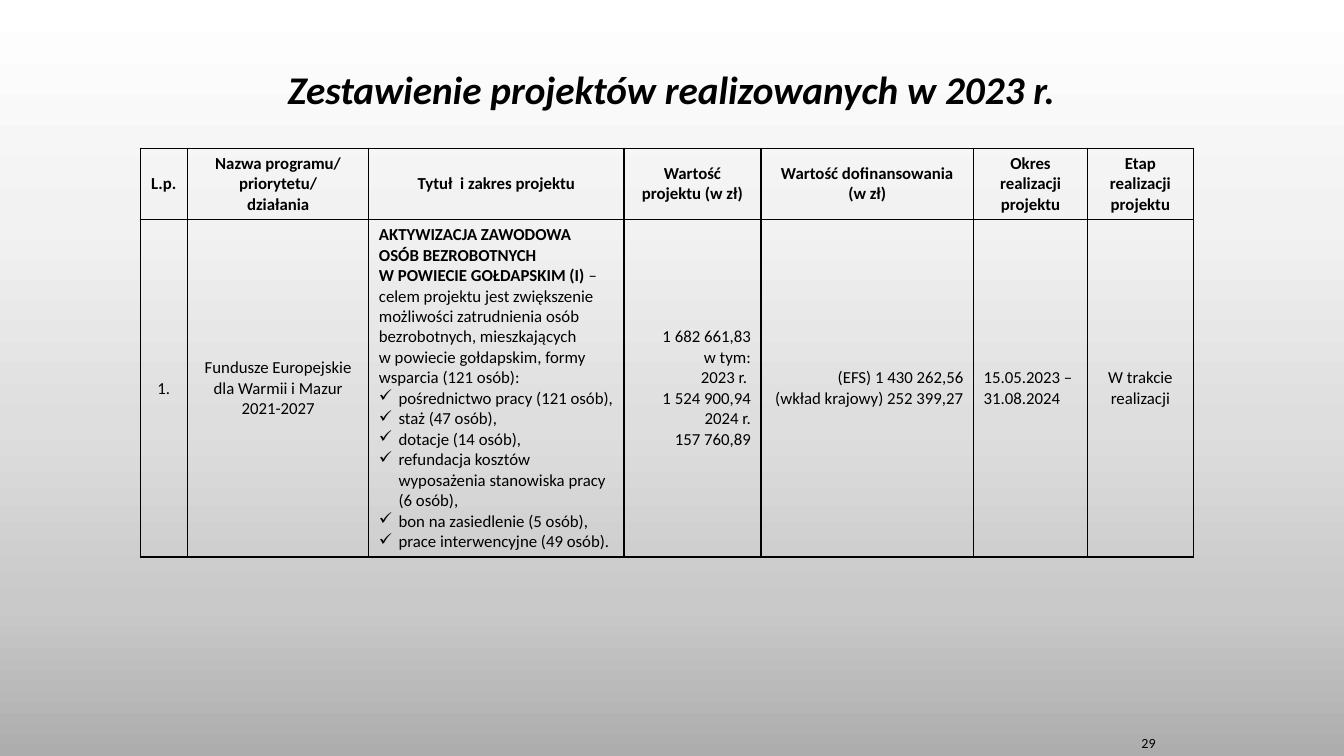
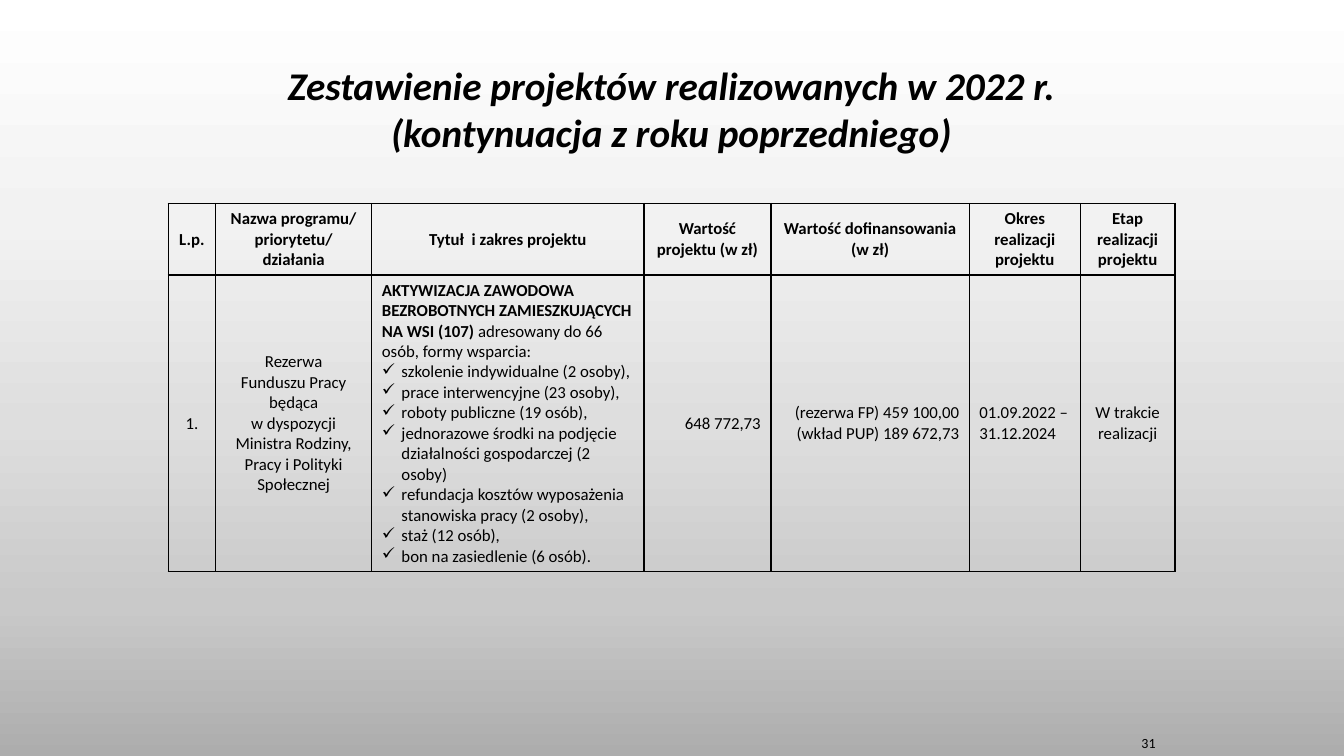
"""Builds two slides that list funded labour-market projects in tables."""
import pptx
import pptx.dml.color
import pptx.enum.text
import pptx.oxml.ns
import pptx.util
from lxml import etree

Pt = pptx.util.Pt
qn = pptx.oxml.ns.qn
ALIGN = pptx.enum.text.PP_ALIGN
ANCHOR = pptx.enum.text.MSO_ANCHOR

BLACK = pptx.dml.color.RGBColor(0, 0, 0)
FONT = "Calibri"
GRADIENT = [
    (0, pptx.dml.color.RGBColor(0xFF, 0xFF, 0xFF)),
    (29, pptx.dml.color.RGBColor(0xF2, 0xF2, 0xF2)),
    (56, pptx.dml.color.RGBColor(0xDE, 0xDE, 0xDE)),
    (80, pptx.dml.color.RGBColor(0xC9, 0xC9, 0xC9)),
    (100, pptx.dml.color.RGBColor(0xAD, 0xAD, 0xAD)),
]
SLIDE_WIDTH, SLIDE_HEIGHT = 960, 540
TITLE_LEFT, TITLE_TOP, TITLE_WIDTH = 173.5, 32.4, 612
PAGE_BOX = (800.6, 516.2, 39.6, 23.8)
HEADER_HEIGHT = 51.1
BULLET_INDENT = 14

HEADERS = [
    ["L.p."],
    ["Nazwa programu/", "priorytetu/", "działania"],
    ["Tytuł  i zakres projektu"],
    ["Wartość projektu (w zł)"],
    ["Wartość dofinansowania (w zł)"],
    ["Okres", "realizacji projektu"],
    ["Etap", "realizacji projektu"],
]
BODY_ALIGNMENTS = [
    ALIGN.CENTER, ALIGN.CENTER, ALIGN.LEFT, ALIGN.RIGHT,
    ALIGN.RIGHT, ALIGN.LEFT, ALIGN.CENTER,
]
SCOPE_COLUMN = 2

PROJECTS = [
    {
        "title": "Zestawienie projektów realizowanych w 2023 r.",
        "title_height": 62.6,
        "page": "29",
        "position": (100.1, 105.8),
        "widths": [33.8, 129.6, 182.2, 97.9, 151.9, 81.4, 75.6],
        "body_height": 241,
        "cells": [
            ["1."],
            ["Fundusze Europejskie dla Warmii i Mazur 2021-2027"],
            [
                ("AKTYWIZACJA ZAWODOWA OSÓB BEZROBOTNYCH", ""),
                ("W POWIECIE GOŁDAPSKIM (I)",
                 " – celem projektu jest zwiększenie możliwości zatrudnienia "
                 "osób bezrobotnych, mieszkających"),
                ("", "w powiecie gołdapskim, formy wsparcia (121 osób):"),
            ],
            ["1 682 661,83", "w tym:", "2023 r. ", "1 524 900,94",
             "2024 r.", "157 760,89"],
            ["(EFS) 1 430 262,56", "(wkład krajowy) 252 399,27"],
            ["15.05.2023 – 31.08.2024"],
            ["W trakcie realizacji"],
        ],
        "support": [
            "pośrednictwo pracy (121 osób),",
            "staż (47 osób),",
            "dotacje (14 osób),",
            "refundacja kosztów wyposażenia stanowiska pracy (6 osób),",
            "bon na zasiedlenie (5 osób),",
            "prace interwencyjne (49 osób).",
        ],
    },
    {
        "title": "Zestawienie projektów realizowanych w 2022 r. "
                 "(kontynuacja z roku poprzedniego)",
        "title_height": 90,
        "page": "31",
        "position": (120.2, 145.4),
        "widths": [33.8, 111.6, 194.4, 90.7, 141.8, 79.2, 67.7],
        "body_height": 212,
        "cells": [
            ["1."],
            ["Rezerwa", "Funduszu Pracy będąca",
             "w dyspozycji Ministra Rodziny, Pracy i Polityki Społecznej"],
            [
                ("AKTYWIZACJA ZAWODOWA BEZROBOTNYCH ZAMIESZKUJĄCYCH NA WSI (107) ",
                 "adresowany do 66 osób, formy wsparcia:"),
            ],
            ["648 772,73"],
            ["(rezerwa FP) 459 100,00 (wkład PUP) 189 672,73"],
            ["01.09.2022 – 31.12.2024"],
            ["W trakcie realizacji"],
        ],
        "support": [
            "szkolenie indywidualne (2 osoby),",
            "prace interwencyjne (23 osoby),",
            "roboty publiczne (19 osób),",
            "jednorazowe środki na podjęcie działalności gospodarczej (2 osoby)",
            "refundacja kosztów wyposażenia stanowiska pracy (2 osoby),",
            "staż (12 osób),",
            "bon na zasiedlenie (6 osób).",
        ],
    },
]


def set_background(master):
    fill = master.background.fill
    fill.gradient()
    fill.gradient_angle = 270
    stops = master.element.find(".//" + qn("a:gsLst"))
    for stop in list(stops):
        stops.remove(stop)
    for position, color in GRADIENT:
        stop = etree.SubElement(stops, qn("a:gs"), pos=str(position * 1000))
        etree.SubElement(stop, qn("a:srgbClr"), val=str(color))


def style_font(font, size, bold=False, italic=False):
    font.name = FONT
    font.size = Pt(size)
    font.bold = bold
    font.italic = italic
    font.color.rgb = BLACK


def add_title(slide, text, height):
    title = slide.shapes.title
    title.left, title.top = Pt(TITLE_LEFT), Pt(TITLE_TOP)
    title.width, title.height = Pt(TITLE_WIDTH), Pt(height)
    frame = title.text_frame
    frame.text = text
    frame.auto_size = pptx.enum.text.MSO_AUTO_SIZE.NONE
    frame.vertical_anchor = ANCHOR.MIDDLE
    paragraph = frame.paragraphs[0]
    paragraph.alignment = ALIGN.CENTER
    style_font(paragraph.runs[0].font, 28, bold=True, italic=True)


def add_page_number(slide, text):
    frame = slide.shapes.add_textbox(*map(Pt, PAGE_BOX)).text_frame
    frame.text = text
    frame.word_wrap = True
    frame.vertical_anchor = ANCHOR.BOTTOM
    paragraph = frame.paragraphs[0]
    paragraph.alignment = ALIGN.CENTER
    style_font(paragraph.runs[0].font, 10)


def format_cell(cell):
    cell.fill.background()
    cell.vertical_anchor = ANCHOR.MIDDLE
    properties = cell._tc.get_or_add_tcPr()
    for index, side in enumerate(("lnL", "lnR", "lnT", "lnB")):
        line = etree.Element(qn("a:" + side), w=str(Pt(1)))
        solid = etree.SubElement(line, qn("a:solidFill"))
        etree.SubElement(solid, qn("a:srgbClr"), val=str(BLACK))
        properties.insert(index, line)


def add_bullet(paragraph):
    properties = paragraph._p.get_or_add_pPr()
    properties.set("marL", str(Pt(BULLET_INDENT)))
    properties.set("indent", str(-Pt(BULLET_INDENT)))
    etree.SubElement(properties, qn("a:buChar"), char="✓")


def fill_cell(cell, lines, alignment, bullets=()):
    """Writes lines given as (bold text, regular text), then bulleted items."""
    format_cell(cell)
    frame = cell.text_frame
    all_lines = list(lines) + [("", item) for item in bullets]
    for index, texts in enumerate(all_lines):
        paragraph = frame.add_paragraph() if index else frame.paragraphs[0]
        paragraph.alignment = alignment
        if index >= len(lines):
            add_bullet(paragraph)
        for text, bold in zip(texts, (True, False)):
            if text:
                run = paragraph.add_run()
                run.text = text
                style_font(run.font, 12, bold)


def add_project_table(slide, project):
    widths = project["widths"]
    heights = [HEADER_HEIGHT, project["body_height"]]
    left, top = project["position"]
    table = slide.shapes.add_table(
        len(heights), len(widths), Pt(left), Pt(top), Pt(sum(widths)), Pt(sum(heights))
    ).table
    table.first_row = table.horz_banding = False
    for row, height in zip(table.rows, heights):
        row.height = Pt(height)
    for column, width in enumerate(widths):
        table.columns[column].width = Pt(width)
        header = [(text, "") for text in HEADERS[column]]
        fill_cell(table.cell(0, column), header, ALIGN.CENTER)
        body, bullets = project["cells"][column], project["support"]
        if column != SCOPE_COLUMN:
            body, bullets = [("", text) for text in body], ()
        fill_cell(table.cell(1, column), body, BODY_ALIGNMENTS[column], bullets)


def main():
    presentation = pptx.Presentation()
    presentation.slide_width = Pt(SLIDE_WIDTH)
    presentation.slide_height = Pt(SLIDE_HEIGHT)
    set_background(presentation.slide_master)
    for project in PROJECTS:
        slide = presentation.slides.add_slide(presentation.slide_layouts[5])
        add_title(slide, project["title"], project["title_height"])
        add_page_number(slide, project["page"])
        add_project_table(slide, project)
    presentation.save("out.pptx")


if __name__ == "__main__":
    main()
